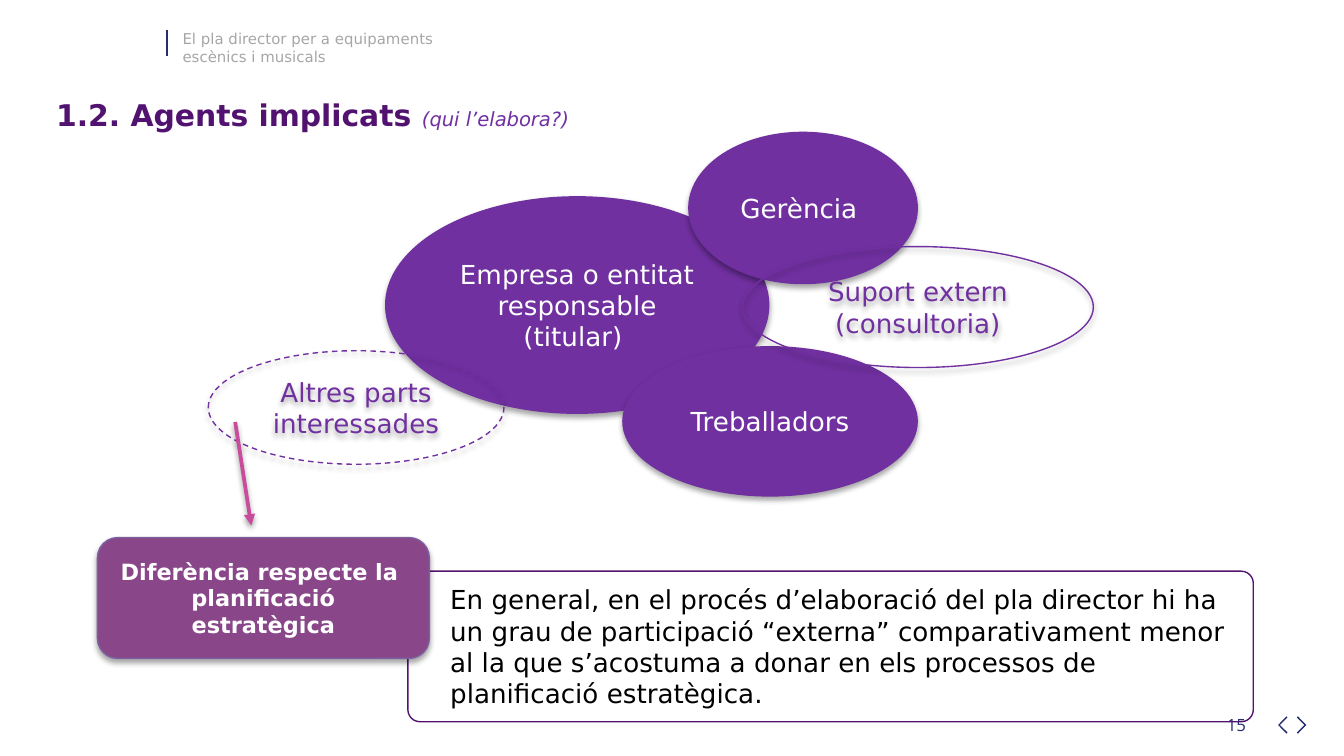
from lxml.etree import SubElement
from pptx import Presentation
from pptx.dml.color import RGBColor
from pptx.enum.dml import MSO_LINE
from pptx.enum.shapes import MSO_CONNECTOR, MSO_SHAPE
from pptx.enum.text import MSO_ANCHOR, PP_ALIGN
from pptx.oxml.ns import qn
from pptx.util import Inches, Pt

WIDTH = 10
HEIGHT = WIDTH * 9 / 16
CELL = Inches(0.1)
FONT = "DejaVu Sans"
INK = {
    "navy": "262E72", "grey": "A6A6A6", "plum": "521270", "violet": "7030A0",
    "pink": "C94B9C", "mauve": "894789", "edge": "7D60A0",
    "white": "FFFFFF", "black": "000000",
}


def tint(name):
    """Return the named colour."""
    return RGBColor.from_string(INK[name])


def cells(*spans):
    """Turn grid cells into lengths."""
    return [round(span * CELL) for span in spans]


def inner(box, part):
    """Place a part, given from the corner of a box, on the grid."""
    return box[0] + part[0], box[1] + part[1], *part[2:]


def write(para, text, size, color, bold=False, italic=False, font=FONT):
    """Add one styled run."""
    run = para.add_run()
    run.text = text
    run.font.name, run.font.size = font, Pt(size)
    run.font.bold, run.font.italic = bold, italic
    run.font.color.rgb = tint(color)


def fill_text(shape, lines, size, color, align=PP_ALIGN.LEFT, **style):
    """Write one paragraph for each line and return the paragraphs."""
    frame = shape.text_frame
    frame.word_wrap = True
    for i, line in enumerate(lines):
        para = frame.add_paragraph() if i else frame.paragraphs[0]
        para.alignment = align
        write(para, line, size, color, **style)
    return frame.paragraphs


def stroke(line, color, width):
    """Colour a line and set its width."""
    line.color.rgb = tint(color)
    line.width = Pt(width)


def shade(shape, alpha=None, drop=1.8):
    """Set the effects of a shape: a soft shadow below it, or none."""
    props = shape._element.spPr
    for old in props.findall(qn("a:effectLst")):
        props.remove(old)
    effects = SubElement(props, qn("a:effectLst"))
    if alpha:
        cast = SubElement(effects, qn("a:outerShdw"), blurRad=str(Pt(3.1)),
                          dist=str(Pt(drop)), dir="5400000", rotWithShape="0")
        color = SubElement(cast, qn("a:srgbClr"), val=INK["black"])
        SubElement(color, qn("a:alpha"), val=str(alpha * 1000))


def panel(slide, kind, box, fill=None, line=None, soft=True):
    """Draw a shape with its fill, line and shadow."""
    shape = slide.shapes.add_shape(kind, *cells(*box))
    shape.text_frame.vertical_anchor = MSO_ANCHOR.MIDDLE
    if fill:
        shape.fill.solid()
        shape.fill.fore_color.rgb = tint(fill)
    else:
        shape.fill.background()
    if line:
        stroke(shape.line, line, 0.75)
    else:
        shape.line.fill.background()
    shade(shape, 35 if soft else None)
    return shape


def link(slide, start, end, color, width):
    """Draw a straight line between two grid points."""
    line = slide.shapes.add_connector(MSO_CONNECTOR.STRAIGHT, *cells(*start, *end))
    stroke(line.line, color, width)
    shade(line)
    return line


def header(slide, box):
    """Draw the running head with its rule."""
    x, y, w, h = box
    text = slide.shapes.add_textbox(*cells(x + 0.2, y, w - 0.2, h))
    fill_text(text, ["El pla director per a equipaments", "escènics i musicals"],
              8, "grey")
    link(slide, (x, y + 0.5), (x, y + 2.5), "navy", 1)


def title(slide, box):
    """Write the heading and its aside."""
    text = slide.shapes.add_textbox(*cells(*box))
    para = fill_text(text, ["1.2. Agents implicats "], 16, "plum", bold=True)[0]
    write(para, "(qui l’elabora?)", 10.5, "violet", italic=True)


def agents(slide, box):
    """Draw the overlapping ellipses of the agents."""
    parts = [
        ("Empresa o entitat responsable (titular) ", (13.15, 4.8, 28.6, 16.2), True),
        ("Treballadors", (30.8, 15.95, 22, 11.2), True),
        ("Gerència ", (35.7, 0, 17.1, 11.35), True),
        ("Suport extern (consultoria)", (39.75, 8.55, 26.1, 9), False),
        ("Altres parts interessades", (0, 16.3, 22, 8.45), False),
    ]
    for text, part, solid in parts:
        fill, line = ("violet", None) if solid else (None, "violet")
        oval = panel(slide, MSO_SHAPE.OVAL, inner(box, part), fill, line)
        fill_text(oval, [text], 14, "white" if solid else "violet", PP_ALIGN.CENTER)
    oval.line.dash_style = MSO_LINE.DASH


def arrow(slide, box):
    """Draw the arrow from the top left to the bottom right of a box."""
    x, y, w, h = box
    line = link(slide, (x, y), (x + w, y + h), "pink", 2)
    SubElement(line.line._get_or_add_ln(), qn("a:tailEnd"), type="triangle")
    shade(line, 38, 1.6)


def remark(slide, box):
    """Draw the remark and the label on its corner."""
    body = panel(slide, MSO_SHAPE.ROUNDED_RECTANGLE,
                 inner(box, (23.1, 2.5, 62.9, 11.2)), line="plum", soft=False)
    body.adjustments[0] = 0.08
    lines = [
        "En general, en el procés d’elaboració del pla director hi ha",
        "un grau de participació “externa” comparativament menor al la que "
        "s’acostuma a donar en els processos de planificació estratègica.",
    ]
    for para in fill_text(body, lines, 14, "black"):
        para._p.get_or_add_pPr().set("marL", str(Inches(0.19)))
    label = panel(slide, MSO_SHAPE.ROUNDED_RECTANGLE, inner(box, (0, 0, 24.7, 9)),
                  "mauve", "edge")
    fill_text(label, ["Diferència respecte la ", "planificació estratègica"],
              12, "white", PP_ALIGN.CENTER, bold=True)


def footer(slide, box):
    """Draw the page number and the two chevrons."""
    x, y, w, h = box
    text = slide.shapes.add_textbox(*cells(x, y, 5.6, h))
    fill_text(text, ["15"], 9, "navy", font="Open Sans")
    wide, tall, top = 0.7, 1.3, y + 0.6
    outline = [(0.1, 0), (1, 0.5), (0.1, 1), (0, 0.93), (0.8, 0.5), (0, 0.07)]
    for left, flip in ((x + 4.8, True), (x + w - wide, False)):
        points = [cells(left + wide * (1 - u if flip else u), top + tall * v)
                  for u, v in outline]
        pen = slide.shapes.build_freeform(*points[0], scale=1.0)
        pen.add_line_segments(points[1:], close=True)
        mark = pen.convert_to_shape()
        mark.fill.solid()
        mark.fill.fore_color.rgb = tint("navy")
        mark.line.fill.background()
        shade(mark)


def main():
    """Build the slide and save it."""
    deck = Presentation()
    deck.slide_width, deck.slide_height = Inches(WIDTH), Inches(HEIGHT)
    slide = deck.slides.add_slide(deck.slide_layouts[6])
    footer(slide, (90.3, 52.7, 6.9, 2.5))
    header(slide, (12.4, 1.7, 30.3, 3.7))
    title(slide, (3.2, 6.7, 89.2, 5.5))
    agents(slide, (15.5, 9.8, 65.8, 27.2))
    arrow(slide, (17.5, 31.4, 1.2, 7.7))
    remark(slide, (7.25, 40, 86, 13.7))
    deck.save("out.pptx")


if __name__ == "__main__":
    main()
